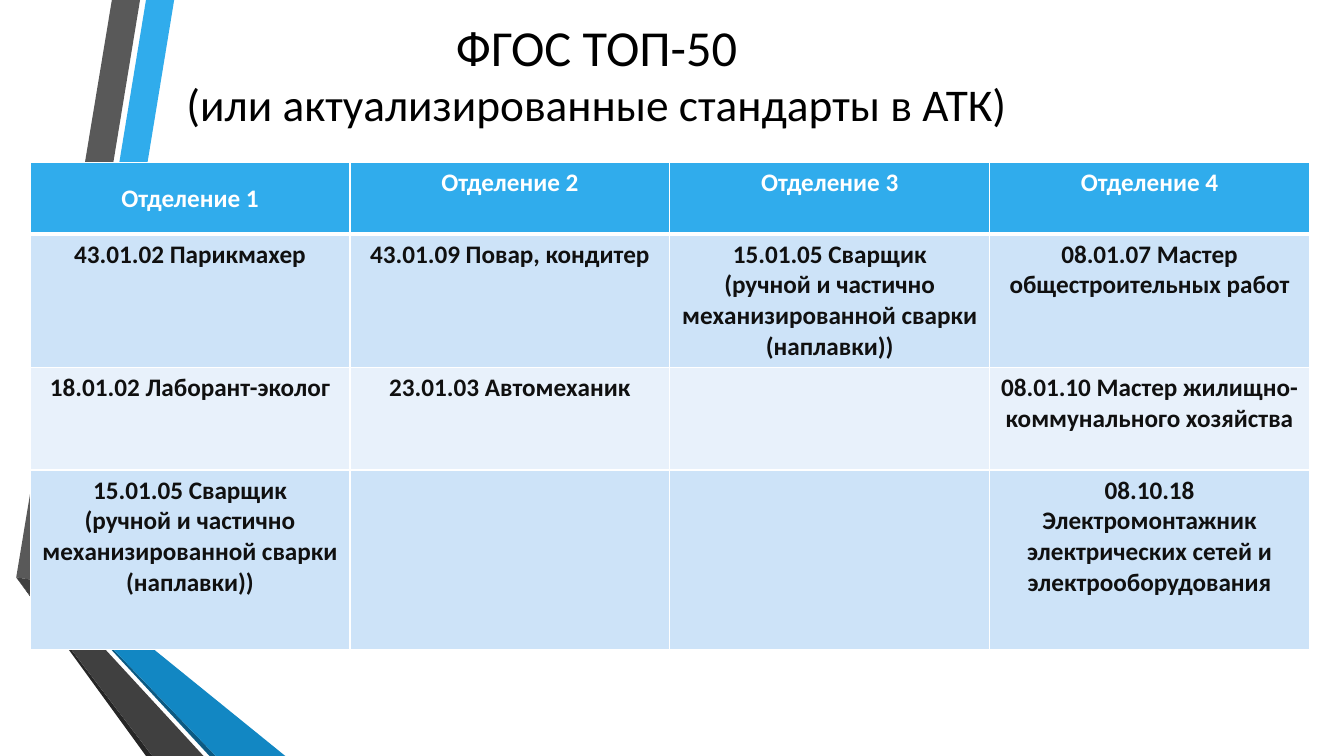
from dataclasses import dataclass

from lxml.etree import SubElement
from pptx import Presentation
from pptx.dml.color import RGBColor
from pptx.enum.text import MSO_ANCHOR as Anchor, MSO_AUTO_SIZE as AutoSize, PP_ALIGN as Align
from pptx.oxml.ns import qn
from pptx.util import Cm, Pt


@dataclass(frozen=True)
class Theme:
    font: str = "Calibri"
    title_size: float = 36
    subtitle_size: float = 32.4
    table_size: float = 18
    black: str = "000000"
    white: str = "FFFFFF"
    cell_text: str = "101010"
    header: str = "30ACEC"
    bands: tuple = ("CDE3F8", "E8F1FB")
    gray: str = "595959"
    gray_fold: str = "404040"
    gray_edge: str = "262626"
    blue: str = "30ACEC"
    blue_fold: str = "1287C3"
    blue_edge: str = "0C5A82"


THEME = Theme()

# Ribbon parts from back to front: colour and outline in centimetres
RIBBONS = [
    (THEME.blue, [(1.27, 14.68), (1.96, 14.81), (4.39, 0), (3.68, 0)]),
    (THEME.gray, [(3.53, 0), (2.82, 0), (0.41, 14.55), (1.12, 14.66)]),
    (THEME.gray_edge, [(0.41, 14.55), (3.68, 19.05), (3.84, 19.05)]),
    (THEME.blue_edge, [(1.27, 14.71), (5.28, 19.05), (5.44, 19.05)]),
    (THEME.blue_fold, [(1.27, 14.71), (5.44, 19.05), (7.19, 19.05),
                       (1.96, 14.81), (1.27, 14.68)]),
    (THEME.gray_fold, [(5.13, 19.05), (1.22, 14.81), (1.09, 14.68), (1.12, 14.66),
                       (0.41, 14.55), (3.84, 19.05)]),
]

WELDER = "15.01.05 Сварщик\n(ручной и частично механизированной сварки (наплавки))"
DEPARTMENTS = [
    ["Отделение 1", "Отделение 2", "Отделение 3", "Отделение 4"],
    ["43.01.02 Парикмахер", "43.01.09 Повар, кондитер", WELDER,
     "08.01.07 Мастер общестроительных работ"],
    ["18.01.02 Лаборант-эколог", "23.01.03 Автомеханик", "",
     "08.01.10 Мастер жилищно-коммунального хозяйства"],
    [WELDER, "", "",
     "08.10.18 Электромонтажник электрических сетей и электрооборудования"],
]
COLUMN_WIDTH = 8.06
ROW_HEIGHTS = [1.8, 3.34, 2.59, 4.52]


def add_run(paragraph, text, *, size, color, bold=False):
    paragraph.alignment = Align.CENTER
    run = paragraph.add_run()
    run.text = text
    run.font.name = THEME.font
    run.font.size = Pt(size)
    run.font.bold = bold
    run.font.color.rgb = RGBColor.from_string(color)


def add_ribbon(slide, color, outline):
    start, *rest = [(Cm(x), Cm(y)) for x, y in outline]
    builder = slide.shapes.build_freeform(*start)
    builder.add_line_segments(rest, close=True)
    ribbon = builder.convert_to_shape()
    ribbon.shadow.inherit = False
    ribbon.fill.solid()
    ribbon.fill.fore_color.rgb = RGBColor.from_string(color)
    ribbon.line.fill.background()


def set_title(slide):
    title = slide.shapes.title
    title.left, title.top = Cm(1.14), Cm(0.43)
    title.width, title.height = Cm(27.79), Cm(2.84)
    frame = title.text_frame
    frame.auto_size = AutoSize.NONE
    frame.vertical_anchor = Anchor.MIDDLE
    heading = frame.paragraphs[0]
    add_run(heading, "ФГОС ТОП-50", size=THEME.title_size, color=THEME.black)
    heading.add_line_break()
    add_run(heading, "(или актуализированные стандарты в АТК)",
            size=THEME.subtitle_size, color=THEME.black)


def set_borders(cell, bottom):
    properties = cell._tc.get_or_add_tcPr()
    widths = {"a:lnL": 1, "a:lnR": 1, "a:lnT": 1, "a:lnB": bottom}
    for position, (side, width) in enumerate(widths.items()):
        border = SubElement(properties, qn(side), w=str(Pt(width)))
        fill = SubElement(border, qn("a:solidFill"))
        SubElement(fill, qn("a:srgbClr"), val=THEME.white)
        properties.insert(position, border)  # borders precede the cell fill


def format_cell(cell, text, *, fill, color, bottom=1, anchor=Anchor.TOP):
    cell.fill.solid()
    cell.fill.fore_color.rgb = RGBColor.from_string(fill)
    cell.vertical_anchor = anchor
    set_borders(cell, bottom)
    frame = cell.text_frame
    for number, line in enumerate(text.splitlines()):
        paragraph = frame.add_paragraph() if number else frame.paragraphs[0]
        add_run(paragraph, line, size=THEME.table_size, color=color, bold=True)


def add_departments(slide):
    columns = len(DEPARTMENTS[0])
    table = slide.shapes.add_table(
        len(DEPARTMENTS), columns, Cm(0.76), Cm(4.1),
        Cm(COLUMN_WIDTH * columns), Cm(sum(ROW_HEIGHTS))).table
    for column in table.columns:
        column.width = Cm(COLUMN_WIDTH)
    for r, (height, texts) in enumerate(zip(ROW_HEIGHTS, DEPARTMENTS)):
        table.rows[r].height = Cm(height)
        for c, text in enumerate(texts):
            cell = table.cell(r, c)
            if r == 0:
                format_cell(cell, text, fill=THEME.header, color=THEME.white, bottom=3,
                            anchor=Anchor.TOP if c else Anchor.MIDDLE)
            else:
                format_cell(cell, text, fill=THEME.bands[(r - 1) % 2],
                            color=THEME.cell_text)


def main():
    deck = Presentation()
    deck.slide_width, deck.slide_height = Cm(33.87), Cm(19.05)
    title_only = deck.slide_layouts[5]
    slide = deck.slides.add_slide(title_only)

    # Decorative ribbons lie under the table
    for color, outline in RIBBONS:
        add_ribbon(slide, color, outline)

    # Heading and the professions of each department
    set_title(slide)
    add_departments(slide)
    deck.save("out.pptx")


if __name__ == "__main__":
    main()
